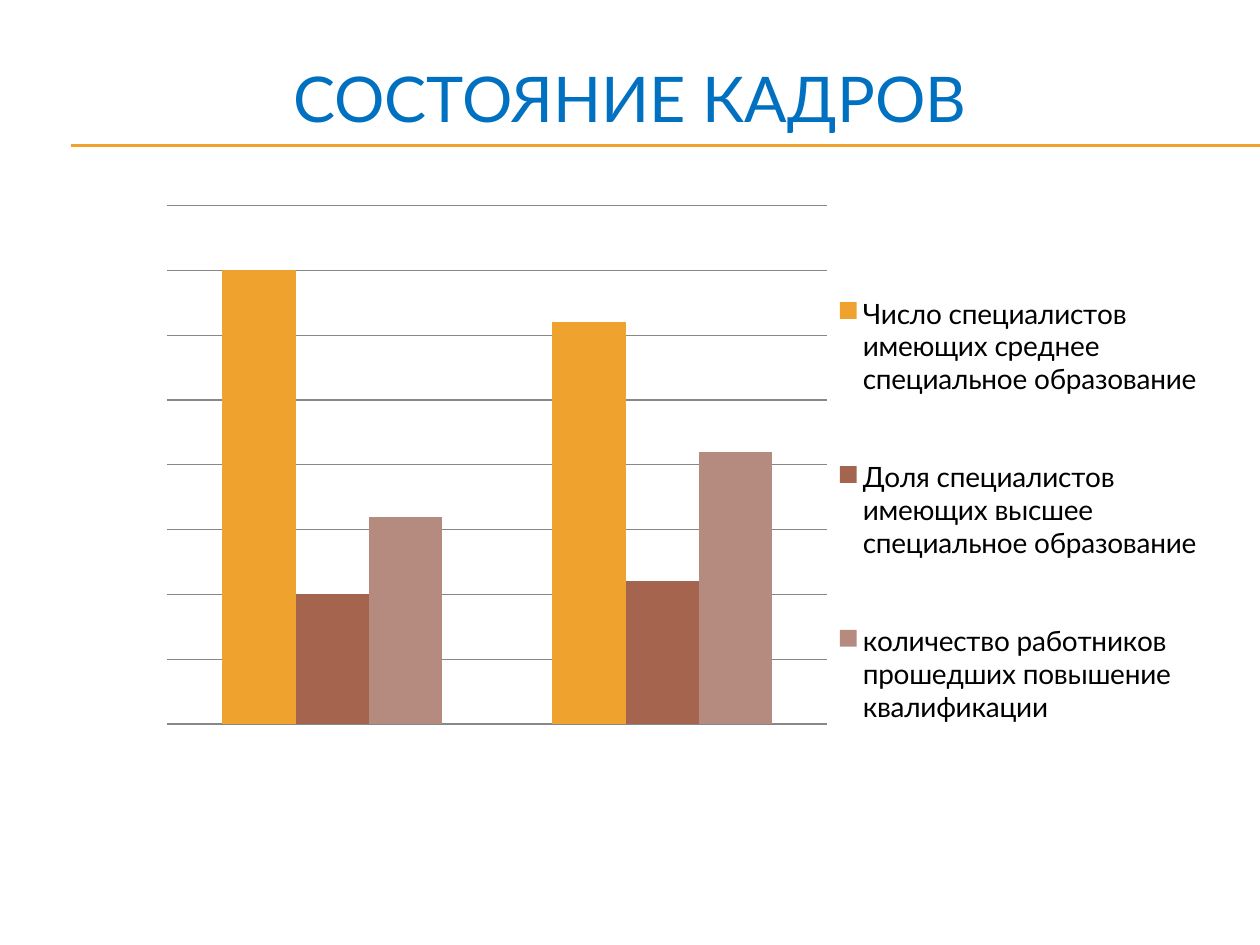
from dataclasses import dataclass

from lxml.etree import SubElement
from pptx import Presentation
from pptx.chart.data import CategoryChartData
from pptx.dml.color import RGBColor
from pptx.enum.chart import XL_CHART_TYPE, XL_LEGEND_POSITION
from pptx.enum.shapes import MSO_CONNECTOR
from pptx.enum.text import MSO_ANCHOR, PP_ALIGN
from pptx.oxml import parse_xml
from pptx.oxml.ns import nsdecls, qn
from pptx.slide import Slide
from pptx.util import Pt

FONT = "Lato"
AMBER = "F0A22E"
BLUE = "0070C0"
BLACK = "000000"
GRID = "878787"


@dataclass(frozen=True)
class Rule:
    left: float
    right: float
    y: float


@dataclass(frozen=True)
class StaffSeries:
    name: str
    values: tuple[int, ...]
    color: str


RULES = [Rule(40.32, 720, 82.8), Rule(40.32, 720, 83.5)]
STAFF = [
    StaffSeries("Число специалистов имеющих среднее специальное образование", (35, 31), AMBER),
    StaffSeries("Доля специалистов имеющих высшее специальное образование", (10, 11), "A5644E"),
    StaffSeries("количество работников прошедших повышение квалификации", (16, 21), "B58B80"),
]


def rgb(color: str) -> RGBColor:
    return RGBColor.from_string(color)


def apply(target, formats: dict) -> None:
    for attribute, value in formats.items():
        setattr(target, attribute, value)


def set_font(font, size: float, color: str) -> None:
    apply(font, {"name": FONT, "size": Pt(size), "bold": False})
    font.color.rgb = rgb(color)


def draw_rule(slide: Slide, rule: Rule) -> None:
    line = slide.shapes.add_connector(
        MSO_CONNECTOR.STRAIGHT, Pt(rule.left), Pt(rule.y), Pt(rule.right), Pt(rule.y))
    line.line.color.rgb = rgb(AMBER)
    line.line.width = Pt(0.75)
    SubElement(line._element.spPr, qn("a:effectLst"))


def draw_title(slide: Slide, text: str) -> None:
    frame = slide.shapes.add_textbox(Pt(36), Pt(21.6), Pt(648), Pt(68.4)).text_frame
    apply(frame, {"word_wrap": True, "vertical_anchor": MSO_ANCHOR.MIDDLE})
    heading = frame.paragraphs[0]
    heading.alignment = PP_ALIGN.CENTER
    run = heading.add_run()
    run.text = text
    set_font(run.font, 36, BLUE)


def manual_layout(x: float, y: float, w: float, h: float, inner: bool = False):
    target = '<c:layoutTarget val="inner"/>' if inner else ""
    return parse_xml(
        f'<c:layout {nsdecls("c")}><c:manualLayout>{target}'
        '<c:xMode val="edge"/><c:yMode val="edge"/>'
        f'<c:x val="{x}"/><c:y val="{y}"/><c:w val="{w}"/><c:h val="{h}"/>'
        "</c:manualLayout></c:layout>")


def draw_staff_chart(slide: Slide, staff: list[StaffSeries]) -> None:
    data = CategoryChartData()
    data.categories = ["1", "2"]
    for group in staff:
        data.add_series(group.name, group.values)
    chart = slide.shapes.add_chart(
        XL_CHART_TYPE.COLUMN_CLUSTERED, Pt(36), Pt(106.56), Pt(661.68), Pt(365.76), data).chart
    set_font(chart.font, 18, BLACK)
    apply(chart, {"has_title": False, "has_legend": True})

    # Columns
    plot = chart.plots[0]
    apply(plot, {"gap_width": 150, "overlap": 0, "vary_by_categories": False})
    for series, group in zip(plot.series, staff):
        series.format.fill.solid()
        series.format.fill.fore_color.rgb = rgb(group.color)

    # Hidden axes with horizontal gridlines
    chart.category_axis.visible = False
    apply(chart.value_axis, {
        "visible": False, "has_major_gridlines": True,
        "minimum_scale": 0, "maximum_scale": 40, "major_unit": 5})
    grid = chart.value_axis.major_gridlines.format.line
    grid.color.rgb = rgb(GRID)
    grid.width = Pt(0.75)

    # Legend
    apply(chart.legend, {"position": XL_LEGEND_POSITION.RIGHT, "include_in_layout": True})
    set_font(chart.legend.font, 16, BLACK)

    # Placement of the plot and the legend
    plot_area = chart._chartSpace.chart.plotArea
    for old in plot_area.findall(qn("c:layout")):
        plot_area.remove(old)
    plot_area.insert(0, manual_layout(0.09, 0.03, 0.57, 0.81, inner=True))
    legend = chart.legend._element
    for old in legend.findall(qn("c:layout")):
        legend.remove(old)
    legend.find(qn("c:legendPos")).addnext(manual_layout(0.66, 0.07, 0.33, 0.87))


def main() -> None:
    deck = Presentation()
    apply(deck, {"slide_width": Pt(720), "slide_height": Pt(540)})
    slide = deck.slides.add_slide(deck.slide_layouts[6])
    for rule in RULES:
        draw_rule(slide, rule)
    draw_title(slide, "СОСТОЯНИЕ КАДРОВ")
    draw_staff_chart(slide, STAFF)
    deck.save("out.pptx")


if __name__ == "__main__":
    main()
